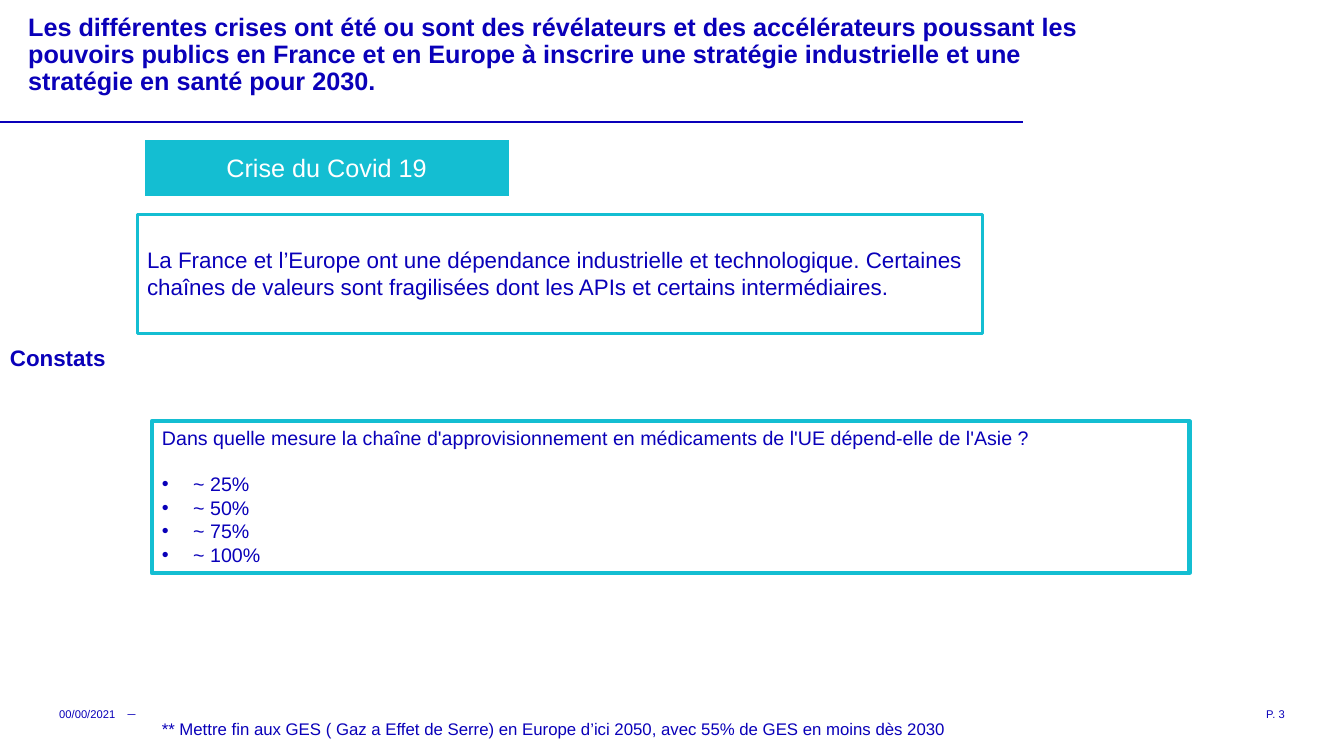
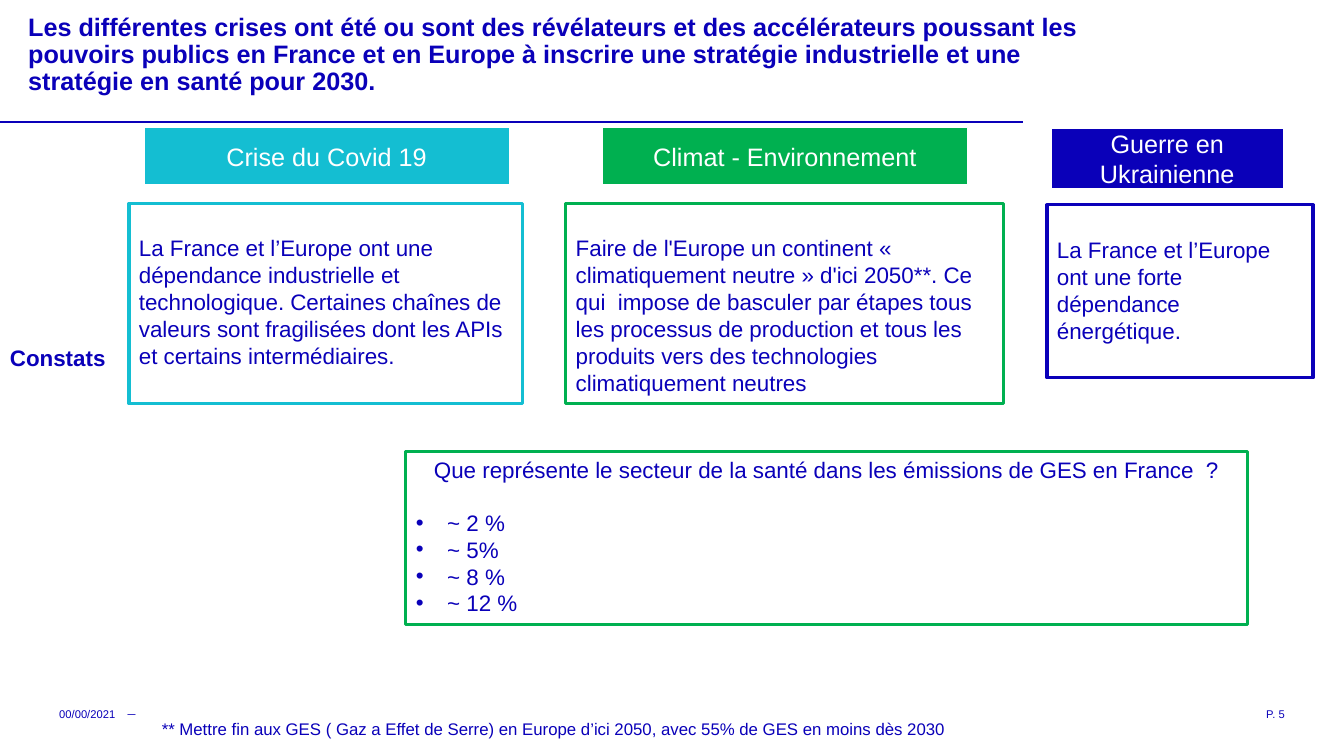
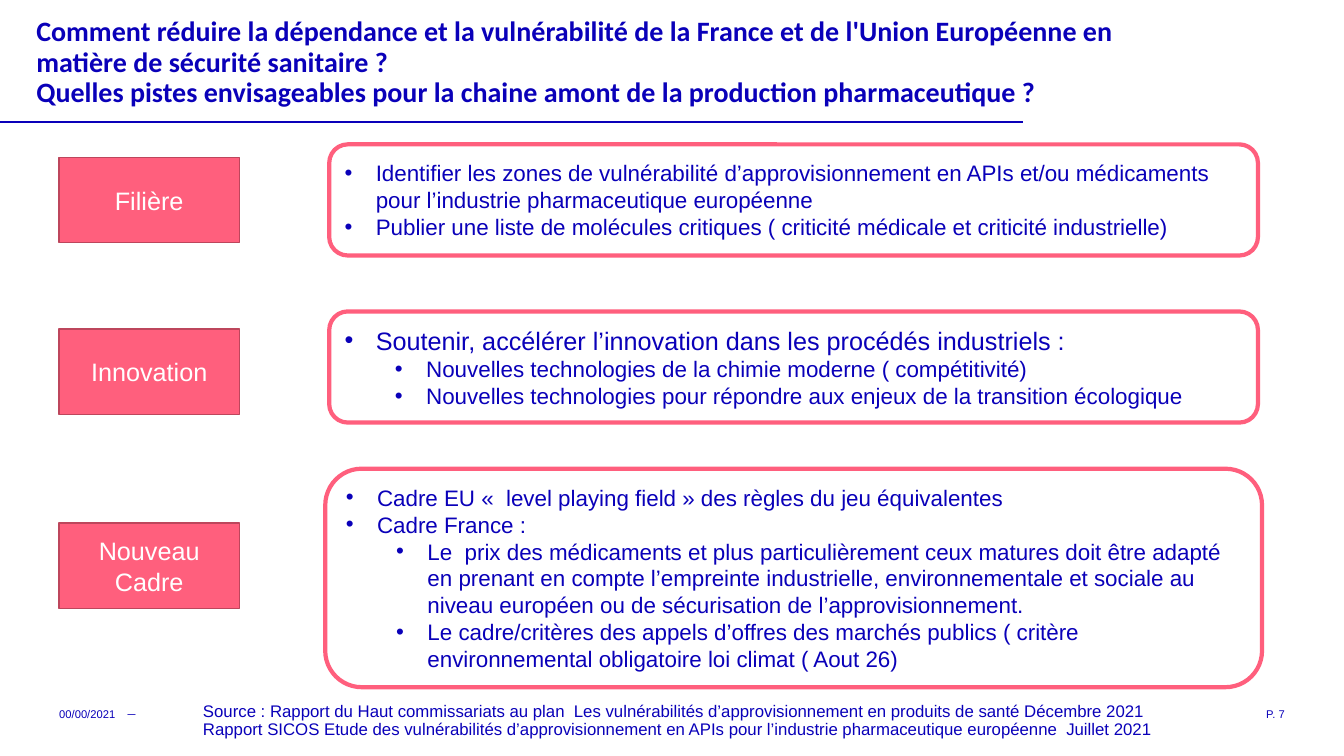
from lxml import etree
from pptx import Presentation
from pptx.dml.color import RGBColor
from pptx.enum.shapes import MSO_CONNECTOR, MSO_SHAPE
from pptx.enum.text import MSO_ANCHOR, MSO_AUTO_SIZE, PP_ALIGN
from pptx.oxml.ns import qn
from pptx.util import Inches, Pt

WIDTH, HEIGHT = Inches(13.33), Inches(7.5)
COL, ROW = WIDTH / 100, HEIGHT / 100
NAVY = RGBColor(0x0A, 0x00, 0xB9)
CYAN = RGBColor(0x14, 0xBE, 0xD2)
GREEN = RGBColor(0x00, 0xB0, 0x50)
PINK = RGBColor(0xFF, 0x5F, 0x7D)
DARK_PINK = RGBColor(0xBD, 0x46, 0x5C)
WHITE = RGBColor(0xFF, 0xFF, 0xFF)
RECT, ROUND = MSO_SHAPE.RECTANGLE, MSO_SHAPE.ROUNDED_RECTANGLE
LEFT, CENTER, RIGHT = PP_ALIGN.LEFT, PP_ALIGN.CENTER, PP_ALIGN.RIGHT
TOP, MIDDLE = MSO_ANCHOR.TOP, MSO_ANCHOR.MIDDLE
NO_FIT = MSO_AUTO_SIZE.NONE
STRAIGHT = MSO_CONNECTOR.STRAIGHT
TITLE_AND_BODY, TITLE_ONLY = 1, 5

SIDES = ("left", "top", "right", "bottom")
NO_INSET = {f"margin_{side}": 0 for side in SIDES}
INSET = {f"margin_{side}": Inches(size)
         for side, size in zip(SIDES, (0.1, 0.05, 0.1, 0.05))}
FINDING_INSET = {**INSET, "margin_top": Inches(0.31)}
INDENT = Inches(0.31)
LEVEL_STEP = Inches(0.5)

CRISES_TITLE = ["Les différentes crises ont été ou sont des révélateurs et des accélérateurs poussant les pouvoirs publics en France et en Europe à inscrire une stratégie industrielle et une stratégie en santé pour 2030."]
LEVERS_TITLE = [
    "Comment réduire la dépendance et la vulnérabilité de la France et de l'Union Européenne en matière de sécurité sanitaire ?",
    "Quelles pistes envisageables pour la chaine amont de la production pharmaceutique ?",
]
COVID = "Crise du Covid 19"
COVID_FINDING = "La France et l’Europe ont une dépendance industrielle et technologique. Certaines chaînes de valeurs sont fragilisées dont les APIs et certains intermédiaires."
CLIMATE_FINDING = "Faire de l'Europe un continent « climatiquement neutre » d'ici 2050**. Ce qui  impose de basculer par étapes tous les processus de production et tous les produits vers des technologies climatiquement neutres"
WAR_FINDING = "La France et l’Europe ont une forte dépendance énergétique."
NOTE = "** Mettre fin aux GES ( Gaz a Effet de Serre) en Europe d’ici 2050, avec 55% de GES en moins dès 2030"
SOURCES = [
    "Source : Rapport du Haut commissariats au plan  Les vulnérabilités d’approvisionnement en produits de santé Décembre 2021",
    "Rapport SICOS Etude des vulnérabilités d’approvisionnement en APIs pour l’industrie pharmaceutique européenne  Juillet 2021",
]
LEVERS = [
    ("Filière", 20.8, (24.5, 19.1, 69.1, 14.7), [
        (0, 16, "Identifier les zones de vulnérabilité d’approvisionnement en APIs et/ou médicaments pour l’industrie pharmaceutique européenne"),
        (0, 16, "Publier une liste de molécules critiques ( criticité médicale et criticité industrielle)"),
    ]),
    ("Innovation", 43.5, (24.5, 41.2, 69.1, 14.7), [
        (0, 18, "Soutenir, accélérer l’innovation dans les procédés industriels :"),
        (1, 16, "Nouvelles technologies de la chimie moderne ( compétitivité)"),
        (1, 16, "Nouvelles technologies pour répondre aux enjeux de la transition écologique"),
    ]),
    ("Nouveau Cadre", 69.2, (24.2, 62, 69.7, 28.9), [
        (0, 16, "Cadre EU «  level playing field » des règles du jeu équivalentes"),
        (0, 16, "Cadre France :"),
        (1, 16, "Le  prix des médicaments et plus particulièrement ceux matures doit être adapté en prenant en compte l’empreinte industrielle, environnementale et sociale au niveau européen ou de sécurisation de l’approvisionnement."),
        (1, 16, "Le cadre/critères des appels d’offres des marchés publics ( critère environnemental obligatoire loi climat ( Aout 26)"),
    ]),
]


def apply(obj, values):
    """Set each attribute of obj from a dict of format values."""
    for name, value in values.items():
        setattr(obj, name, value)


def place(box):
    """Turn percentages of the slide into left, top, width and height."""
    x, y, w, h = box
    return round(x * COL), round(y * ROW), round(w * COL), round(h * ROW)


def move(sp, box):
    """Move and size a placeholder on the grid."""
    apply(sp, dict(zip(("left", "top", "width", "height"), place(box))))


def frame(sp, inset=INSET, anchor=TOP):
    """Prepare the text frame of a shape and return it."""
    tf = sp.text_frame
    apply(tf, {"word_wrap": True, "auto_size": NO_FIT,
               "vertical_anchor": anchor, **inset})
    return tf


def set_bullet(p, level):
    """Give a paragraph a bullet at a level, or none."""
    pPr = p._p.get_or_add_pPr()
    if level is None:
        pPr.set("marL", "0")
        pPr.set("indent", "0")
        etree.SubElement(pPr, qn("a:buNone"))
        return
    p.level = level
    pPr.set("marL", str(INDENT + level * LEVEL_STEP))
    pPr.set("indent", str(-INDENT))
    etree.SubElement(pPr, qn("a:buFont")).set("typeface", "Arial")
    etree.SubElement(pPr, qn("a:buChar")).set("char", "•")


def write(tf, text, size, color=NAVY, bold=False, font="Arial",
          align=LEFT, spacing=1.0, level=None, before=0):
    """Write one paragraph, filling the empty first one if there is one."""
    p = tf.paragraphs[0]
    if p.runs:
        p = tf.add_paragraph()
    set_bullet(p, level)
    apply(p, {"alignment": align, "line_spacing": spacing,
              "space_before": Pt(before), "space_after": Pt(0)})
    r = p.add_run()
    r.text = text
    apply(r.font, {"size": Pt(size), "bold": bold, "name": font})
    r.font.color.rgb = color


def outline(sp, color, weight):
    """Draw the outline of a shape."""
    sp.line.color.rgb = color
    sp.line.width = Pt(weight)


def add_text(s, box, lines, size, inset=INSET, anchor=TOP, **style):
    """Add a text box with one paragraph per line."""
    tf = frame(s.shapes.add_textbox(*place(box)), inset, anchor)
    for text in lines:
        write(tf, text, size, **style)


def add_panel(s, kind, box, fill, line, weight, inset=INSET, anchor=MIDDLE):
    """Add a filled or hollow panel and return its text frame."""
    sp = s.shapes.add_shape(kind, *place(box))
    sp.shadow.inherit = False
    if fill is None:
        sp.fill.background()
    else:
        sp.fill.solid()
        sp.fill.fore_color.rgb = fill
    outline(sp, line, weight)
    return frame(sp, inset, anchor)


def add_label(s, box, text, fill, line=WHITE, weight=1):
    """Add a coloured heading block."""
    tf = add_panel(s, RECT, box, fill, line, weight)
    write(tf, text, 18, color=WHITE, align=CENTER)


def add_finding(s, box, text, color):
    """Add an outlined box holding a finding."""
    tf = add_panel(s, RECT, box, None, color, 2.25, FINDING_INSET, TOP)
    write(tf, text, 16)


def add_quiz(s, box, question, answers, color, size, weight, align=LEFT):
    """Fill the body placeholder with a question and its answers."""
    sp = s.placeholders[1]
    move(sp, box)
    outline(sp, color, weight)
    tf = frame(sp)
    write(tf, question, size, align=align)
    for i, answer in enumerate(answers):
        write(tf, answer, size, level=0, before=0 if i else 1.15 * size)


def add_slide(prs, layout, page, title, box=(2.1, 1.7, 79.1, 11.3), **style):
    """Add a slide with its title, rule and footer."""
    s = prs.slides.add_slide(prs.slide_layouts[layout])
    move(s.shapes.title, box)
    tf = frame(s.shapes.title, NO_INSET, MIDDLE)
    for text in title:
        write(tf, text, bold=True, spacing=0.9, **style)
    y = round(16.1 * ROW)
    rule = s.shapes.add_connector(STRAIGHT, 0, y, round(76.1 * COL), y)
    outline(rule, NAVY, 1.25)
    etree.SubElement(rule._element.spPr, qn("a:effectLst"))
    for x, w, text, align in ((9, 1.6, "─", CENTER),
                              (4.4, 6.2, "00/00/2021", LEFT),
                              (71.6, 24, f"P. {page}", RIGHT)):
        add_text(s, (x, 92.7, w, 3.6), [text], 8, NO_INSET, MIDDLE, align=align)
    return s


def add_crisis_slide(prs, page):
    """Add a slide of the crises sequence with its side label and note."""
    s = add_slide(prs, TITLE_AND_BODY, page, CRISES_TITLE, size=18)
    add_text(s, (0, 44.9, 12.1, 4.9), ["Constats"], 16, bold=True)
    add_text(s, (11.3, 94.4, 63.5, 4), [NOTE], 12)
    return s


def covid_slide(prs):
    """Build the slide on the Covid crisis."""
    s = add_crisis_slide(prs, 3)
    add_label(s, (10.7, 18.4, 27.2, 7.6), COVID, CYAN)
    add_finding(s, (10.2, 28.4, 62.9, 15.7), COVID_FINDING, CYAN)
    add_quiz(s, (11.3, 55.7, 77.2, 20.1),
             "Dans quelle mesure la chaîne d'approvisionnement en médicaments de l'UE dépend-elle de l'Asie ?",
             ["~ 25%", "~ 50%", "~ 75%", "~ 100%"], CYAN, 14, 3)


def crises_slide(prs):
    """Build the slide comparing the three crises."""
    s = add_crisis_slide(prs, 5)
    add_label(s, (10.7, 16.9, 27.2, 7.6), COVID, CYAN)
    add_label(s, (44.8, 16.9, 27.2, 7.6), "Climat - Environnement", GREEN)
    add_label(s, (78.1, 16.8, 17.5, 8.4), "Guerre en Ukrainienne", NAVY, weight=3)
    add_finding(s, (9.6, 26.9, 29.3, 26.5), COVID_FINDING, CYAN)
    add_finding(s, (42.1, 26.9, 32.6, 26.5), CLIMATE_FINDING, GREEN)
    add_finding(s, (77.9, 27.1, 19.8, 22.9), WAR_FINDING, NAVY)
    add_quiz(s, (30.2, 59.7, 62.6, 22.9),
             "Que représente le secteur de la santé dans les émissions de GES en France  ?",
             ["~ 2 %", "~ 5%", "~ 8 %", "~ 12 %"], GREEN, 16, 2.25, CENTER)


def levers_slide(prs):
    """Build the slide listing the possible levers."""
    s = add_slide(prs, TITLE_ONLY, 7, LEVERS_TITLE, (2.7, 2.7, 83.6, 11.3),
                  size=20, font="Calibri")
    for label, y, box, items in LEVERS:
        add_label(s, (4.4, y, 13.4, 11.3), label, PINK, DARK_PINK)
        tf = add_panel(s, ROUND, box, WHITE, PINK, 3)
        for level, size, text in items:
            write(tf, text, size, level=level)
    add_text(s, (15.1, 92.8, 84, 5.2), SOURCES, 12, NO_INSET, MIDDLE, spacing=0.9)


def main():
    """Build and save the presentation."""
    prs = Presentation()
    apply(prs, {"slide_width": WIDTH, "slide_height": HEIGHT})
    covid_slide(prs)
    crises_slide(prs)
    levers_slide(prs)
    prs.save("out.pptx")


if __name__ == "__main__":
    main()
